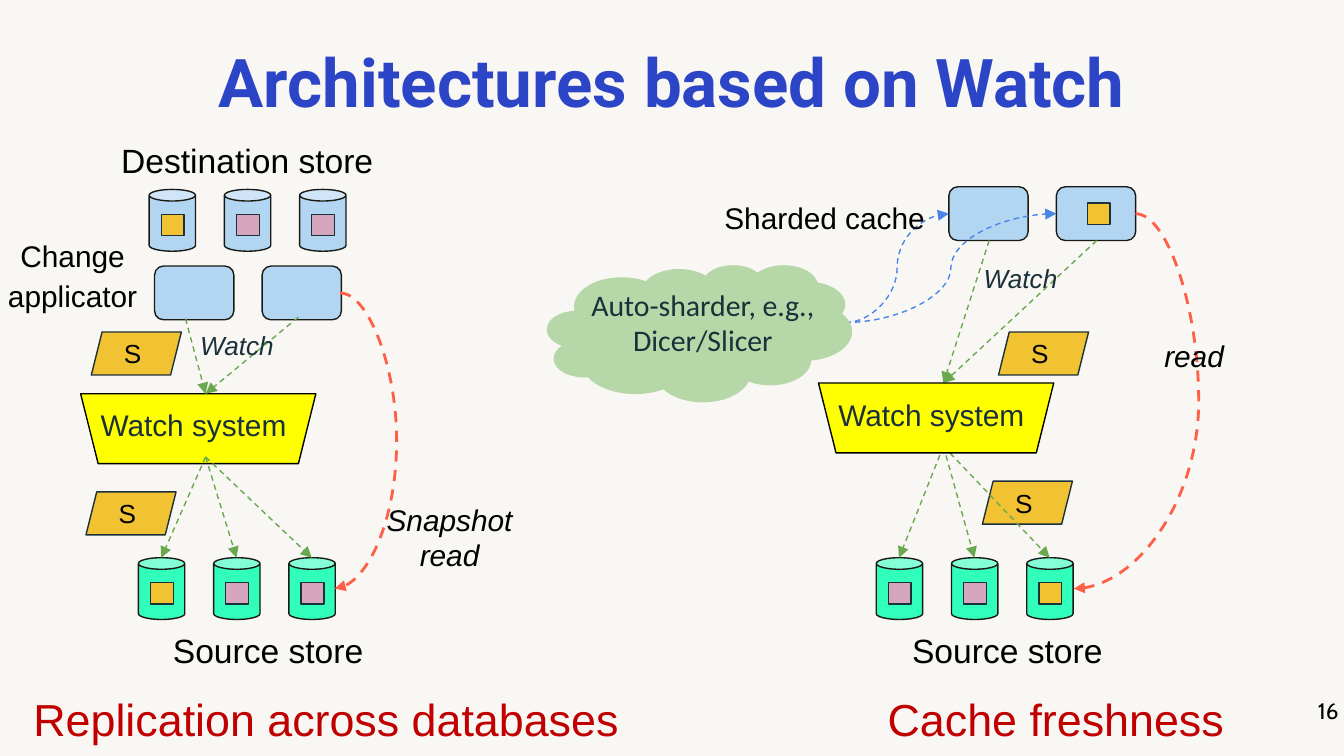
from lxml.etree import SubElement
from pptx import Presentation
from pptx.dml.color import RGBColor
from pptx.enum.dml import MSO_LINE
from pptx.enum.shapes import MSO_CONNECTOR, MSO_SHAPE
from pptx.enum.text import MSO_ANCHOR, PP_ALIGN
from pptx.oxml.ns import qn
from pptx.util import Inches, Pt

COLORS = {name: RGBColor.from_string(value) for name, value in {
    "background": "F9F7F4", "title": "2C45C6", "text": "000000", "ink": "1B3139",
    "outline": "1A1914", "caption": "C00000", "source": "32FEBC", "store": "B2D5F2",
    "watch": "FFFF00", "pink": "D5A6BD", "gold": "F1C232", "cloud": "B6D7A8",
    "green": "6AA84F", "red": "FF5F46", "blue": "4A86E8"}.items()}

deck = Presentation()
deck.slide_width, deck.slide_height = Inches(10), Inches(5.625)
CELL = deck.slide_width / 100
slide = deck.slides.add_slide(deck.slide_layouts[5])
slide.background.fill.solid()
slide.background.fill.fore_color.rgb = COLORS["background"]


def write(holder, words, size, color="text", font="Arial", align=PP_ALIGN.CENTER,
          spacing=None, margins=(1, 1), italic=None, bold=None):
    frame = holder.text_frame
    frame.word_wrap = True
    frame.margin_left = frame.margin_right = int(margins[0] * CELL)
    frame.margin_top = frame.margin_bottom = int(margins[1] * CELL)
    paragraph = frame.paragraphs[0]
    paragraph.text = words
    paragraph.alignment = align
    paragraph.line_spacing = spacing
    paragraph.font.size, paragraph.font.name = Pt(size), font
    paragraph.font.bold, paragraph.font.italic = bold, italic
    paragraph.font.color.rgb = COLORS[color]


def block(kind, column, row, columns, rows, fill, outline="outline"):
    shape = slide.shapes.add_shape(
        kind, *(int(n * CELL) for n in (column, row, columns, rows)))
    shape.shadow.inherit = False
    shape.fill.solid()
    shape.fill.fore_color.rgb = COLORS[fill]
    if outline:
        shape.line.color.rgb = COLORS[outline]
        shape.line.width = Pt(0.75)
    else:
        shape.line.fill.background()
    return shape


title = slide.shapes.title
title.left, title.top, title.width, title.height = (
    int(n * CELL) for n in (3.4, 3.2, 93.2, 6.3))
write(title, "Architectures based on Watch", 36, "title", "Roboto",
      spacing=0.9, margins=(0, 0), bold=True)
title.text_frame.vertical_anchor = MSO_ANCHOR.MIDDLE

STORE_STEP = 5.6
for left, top, store, shards in [
        (11.1, 14.1, "store", ("gold", "pink", "pink")),
        (10.3, 41.5, "source", ("gold", "pink", "pink")),
        (65.2, 41.5, "source", ("pink", "pink", "gold"))]:
    for index, shard in enumerate(shards):
        column = left + index * STORE_STEP
        block(MSO_SHAPE.CAN, column, top, 3.45, 4.6, store)
        block(MSO_SHAPE.RECTANGLE, column + 0.9, top + 1.85, 1.7, 1.6, shard, "ink")

for left, top in [(11.5, 19.8), (70.6, 13.9)]:
    for index in range(2):
        block(MSO_SHAPE.ROUNDED_RECTANGLE, left + index * 8, top, 5.9, 4, "store")
block(MSO_SHAPE.RECTANGLE, 80.9, 15.1, 1.7, 1.6, "gold", "ink")

for column, row in [(6.4, 36.6), (6.8, 24.7), (73.1, 35.8), (74.3, 24.7)]:
    snapshot = block(MSO_SHAPE.PARALLELOGRAM, column, row, 6.7, 3.2, "gold", "ink")
    write(snapshot, "S ", 14)
    snapshot.text_frame.vertical_anchor = MSO_ANCHOR.MIDDLE

block(MSO_SHAPE.TRAPEZOID, 6, 29.3, 17.5, 5.2, "watch", "text").rotation = 180

flows = [(column, row, hub, hub_row, "green", None) for column, row, hub, hub_row in [
    (13.8, 23.7, 15.3, 29.3), (22.2, 23.6, 15.3, 29.3),
    (73.6, 17.9, 70.2, 28.5), (81.6, 17.9, 70.2, 28.5)]]
for hub, row, first_store in [(15.3, 34, 12), (70.2, 33.2, 66.9)]:
    flows += [(hub, row, first_store + index * STORE_STEP, 41.5, "green", None)
              for index in range(3)]
flows += [(25.3, 21.8, 24.9, 43.8, "red", 29.5), (84.5, 15.9, 79.9, 43.8, "red", 89.2),
          (62.9, 24, 70.6, 15.9, "blue", 66.75), (62.9, 24, 78.6, 15.9, "blue", 70.75)]

for x1, y1, x2, y2, color, bend in flows:
    route = MSO_CONNECTOR.CURVE if bend else MSO_CONNECTOR.STRAIGHT
    flow = slide.shapes.add_connector(route, *(int(n * CELL) for n in (x1, y1, x2, y2)))
    flow.line.color.rgb = COLORS[color]
    flow.line.width = Pt(1.5 if color == "red" else 0.75)
    flow.line.dash_style = MSO_LINE.DASH
    properties = flow._element.spPr
    SubElement(properties.find(qn("a:ln")), qn("a:tailEnd"), type="triangle")
    SubElement(properties, qn("a:effectLst"))
    if bend:
        share = round((bend - x1) / (x2 - x1) * 100000)
        guides = properties.find(qn("a:prstGeom")).get_or_add_avLst()
        SubElement(guides, qn("a:gd"), name="adj1", fmla=f"val {share}")

block(MSO_SHAPE.CLOUD, 40.7, 19.7, 22.7, 10.2, "cloud", None)
block(MSO_SHAPE.TRAPEZOID, 60.9, 28.5, 17.5, 5.2, "watch", "text").rotation = 180

store_name = dict(size=18, spacing=1.15, margins=(1, 0.5))
role = dict(size=16, spacing=1.14, margins=(1, 0.5))
caption = dict(size=24, color="caption", spacing=1.14, margins=(1, 0.5))
system = dict(size=16, color="ink", align=PP_ALIGN.LEFT)
watch = dict(size=14, color="ink", align=PP_ALIGN.LEFT, italic=True)
read = dict(size=16, italic=True)
for words, column, row, columns, rows, style in [
        ("Destination store", 5, 9.5, 26.8, 4, store_name),
        ("Source store", 9, 45.9, 21.9, 4, store_name),
        ("Source store", 64, 45.9, 21.9, 4, store_name),
        ("Change applicator", -2, 16.8, 14.8, 6.8, role),
        ("Sharded cache", 51.9, 14, 18.9, 3.7, role),
        ("Watch system", 6.5, 29.3, 17.6, 4.7, system),
        ("Watch system", 61.4, 28.5, 17.6, 4.7, system),
        ("Watch", 13.9, 23.5, 7.9, 4.4, watch),
        ("Watch", 72.2, 18.5, 7.9, 4.4, watch),
        ("Snapshot read", 27.7, 36.3, 11.5, 7.4, read),
        ("read", 83.1, 24.1, 11.5, 4.7, read),
        ("Auto-sharder, e.g.,\nDicer/Slicer", 41.7, 20.3, 21.2, 7.4,
         dict(size=16, color="ink", font="Calibri")),
        ("Replication across databases", 0, 50.4, 48.5, 5, caption),
        ("Cache freshness", 60.8, 50.4, 35.5, 5, caption),
        ("16", 93.6, 51.9, 6, 4.3,
         dict(size=12, font="Cabin", align=PP_ALIGN.RIGHT, margins=(0, 0)))]:
    label = slide.shapes.add_textbox(*(int(n * CELL) for n in (column, row, columns, rows)))
    write(label, words, **style)

deck.save("out.pptx")
